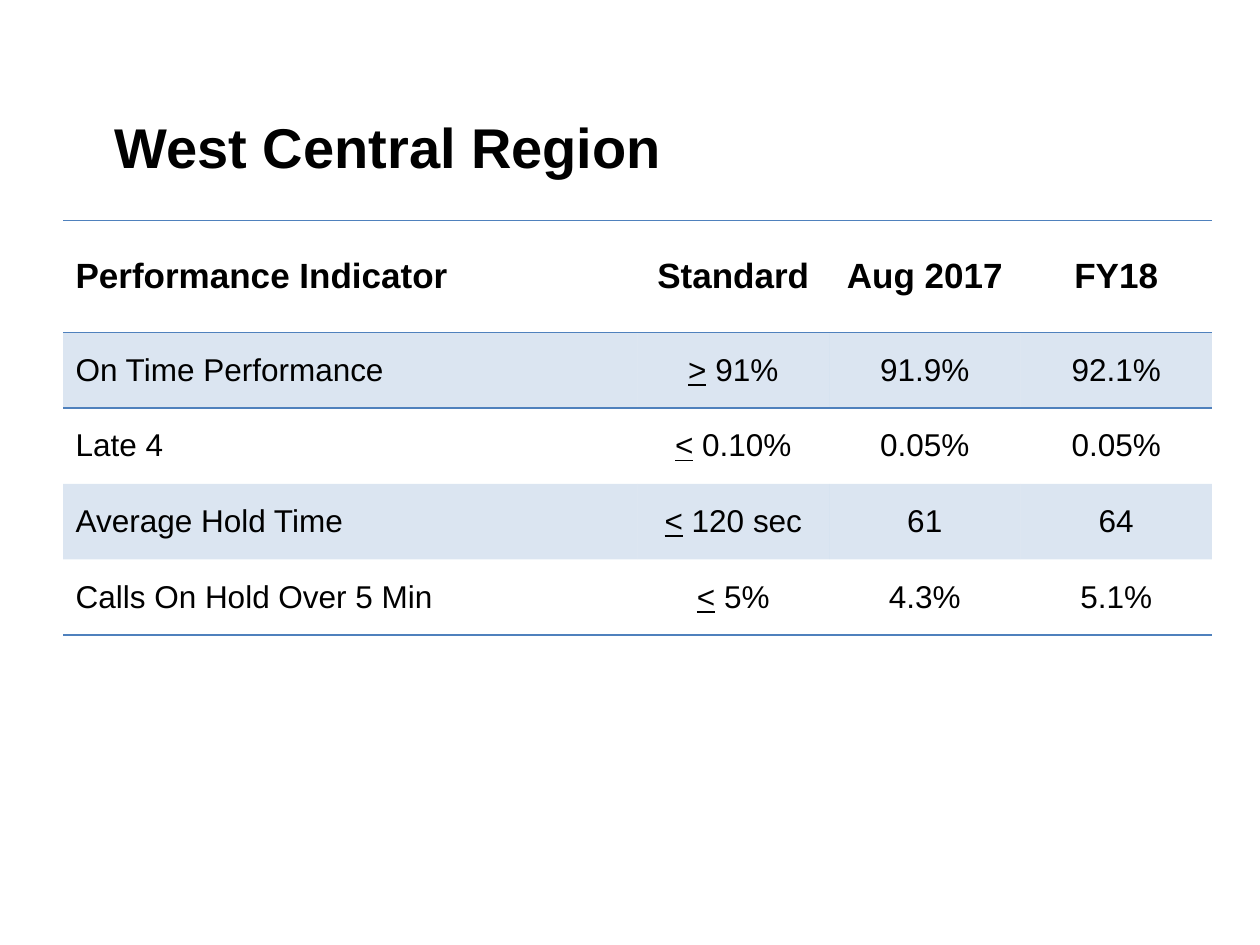
from lxml.etree import SubElement
from pptx import Presentation
from pptx.dml.color import RGBColor
from pptx.enum.text import MSO_ANCHOR as Anchor, PP_ALIGN as Align
from pptx.oxml import parse_xml
from pptx.oxml.ns import nsdecls, qn
from pptx.util import Inches, Pt

BLACK = "000000"
BLUE = "4F81BD"
NO_STYLE = "{2D5ABB26-0587-4C30-8999-92F81FD0307C}"

COLUMN_WIDTHS = [4.56, 1.52, 1.52, 1.52]
HEADER_HEIGHT, ROW_HEIGHT = 0.89, 0.6
ROWS = [
    ["Performance Indicator", "Standard", "Aug 2017", "FY18"],
    ["On Time Performance", "> 91%", "91.9%", "92.1%"],
    ["Late 4", "< 0.10%", "0.05%", "0.05%"],
    ["Average Hold Time", "< 120 sec", "61", "64"],
    ["Calls On Hold Over 5 Min", "< 5%", "4.3%", "5.1%"],
]


def color(value):
    return RGBColor.from_string(value)


def set_font(paragraph, size, bold):
    font = paragraph.font
    font.name, font.size, font.bold = "Arial", Pt(size), bold
    font.color.rgb = color(BLACK)


def add_title(slide, left, top, width, height):
    box = slide.shapes.add_textbox(Inches(left), Inches(top), Inches(width), Inches(height))
    frame = box.text_frame
    frame.word_wrap = True
    frame.vertical_anchor = Anchor.MIDDLE
    paragraph = frame.paragraphs[0]
    paragraph.text = "West Central Region"
    set_font(paragraph, 32, True)


def shade(cell):
    """Fill the cell with blue at 20% opacity."""
    cell.fill.solid()
    cell.fill.fore_color.rgb = color(BLUE)
    fill_color = cell._tc.tcPr.find(qn("a:solidFill"))[0]
    SubElement(fill_color, qn("a:alpha")).set("val", "20000")


def add_borders(cell, sides):
    """Draw 1 pt blue lines; they must come before the fill in the cell properties."""
    properties = cell._tc.get_or_add_tcPr()
    for index, side in enumerate(sides):
        properties.insert(index, parse_xml(
            f'<a:ln{side} {nsdecls("a")} w="{Pt(1)}"><a:solidFill>'
            f'<a:srgbClr val="{BLUE}"/></a:solidFill></a:ln{side}>'))


def fill_cell(cell, text, row, column):
    header = row == 0
    cell.vertical_anchor = Anchor.MIDDLE
    paragraph = cell.text_frame.paragraphs[0]
    paragraph.alignment = Align.CENTER if column else Align.LEFT
    set_font(paragraph, 20 if header else 18, header)
    if text[0] in "<>":
        # An underlined sign reads as "or equal to"
        sign = paragraph.add_run()
        sign.text, sign.font.underline = text[0], True
        text = text[1:]
    paragraph.add_run().text = text

    if row % 2:
        shade(cell)
    else:
        cell.fill.background()
    if header:
        add_borders(cell, "TB")
    elif row == 1:
        add_borders(cell, "T")
    elif row == len(ROWS) - 1:
        add_borders(cell, "B")


def add_indicator_table(slide, left, top):
    height = HEADER_HEIGHT + ROW_HEIGHT * (len(ROWS) - 1)
    table = slide.shapes.add_table(
        len(ROWS), len(COLUMN_WIDTHS), Inches(left), Inches(top),
        Inches(sum(COLUMN_WIDTHS)), Inches(height)).table
    table._tbl.tblPr.find(qn("a:tableStyleId")).text = NO_STYLE
    table.horz_banding = False
    for column, width in zip(table.columns, COLUMN_WIDTHS):
        column.width = Inches(width)
    for row, texts in enumerate(ROWS):
        table.rows[row].height = Inches(ROW_HEIGHT if row else HEADER_HEIGHT)
        for column, text in enumerate(texts):
            fill_cell(table.cell(row, column), text, row, column)


def main():
    presentation = Presentation()
    presentation.slide_width, presentation.slide_height = Inches(10), Inches(7.5)
    slide = presentation.slides.add_slide(presentation.slide_layouts[6])
    add_title(slide, 0.81, 0.84, 8.39, 0.64)
    add_indicator_table(slide, 0.5, 1.75)
    presentation.save("out.pptx")


if __name__ == "__main__":
    main()
